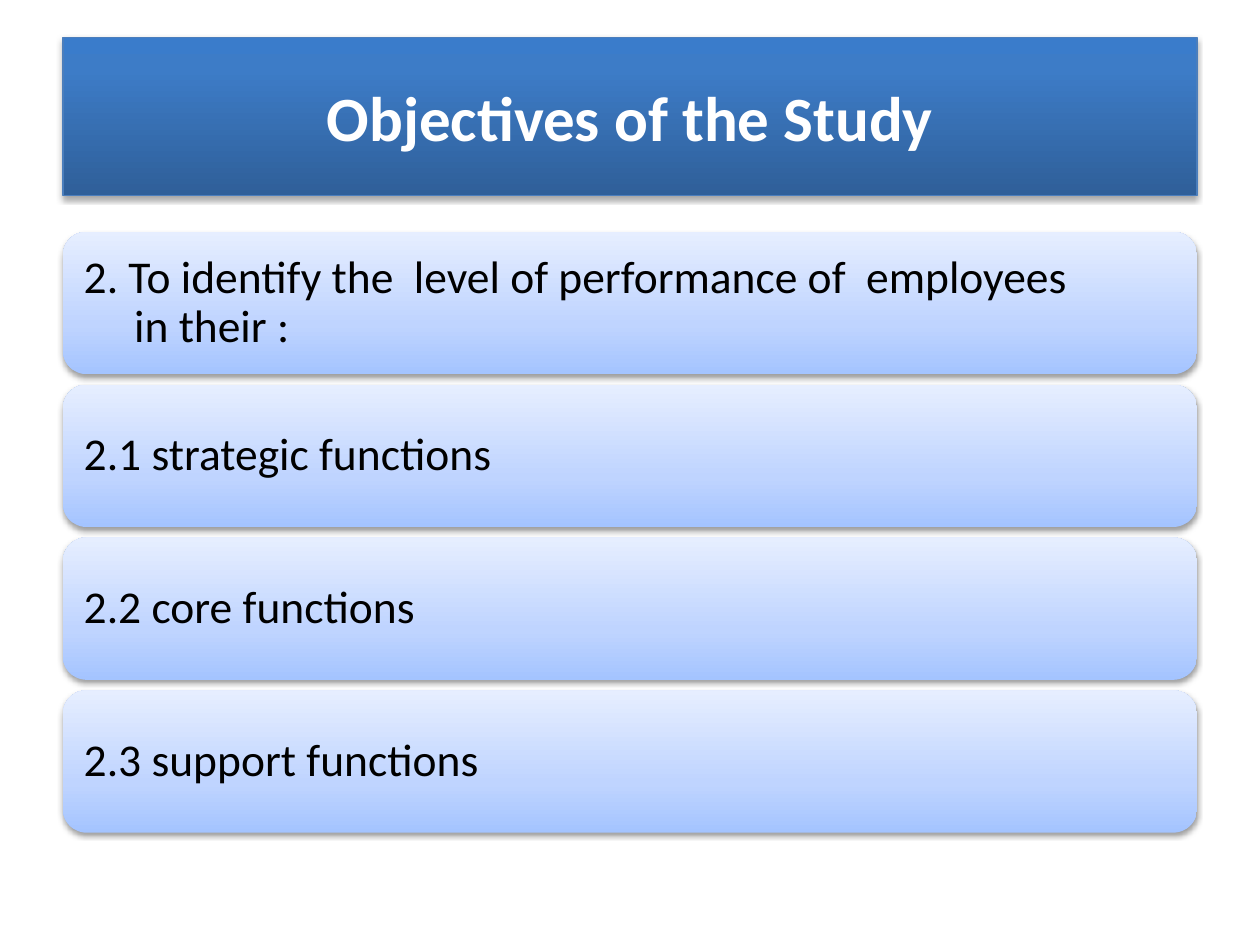
from lxml import etree
from pptx import Presentation
from pptx.dml.color import RGBColor
from pptx.enum.shapes import MSO_SHAPE as Shape
from pptx.enum.text import MSO_ANCHOR as Anchor, PP_ALIGN as Align
from pptx.oxml.ns import qn
from pptx.util import Inches, Pt

WHITE = RGBColor(0xFF, 0xFF, 0xFF)
BLACK = RGBColor(0x00, 0x00, 0x00)
TITLE_LINE = RGBColor(0x4B, 0x7E, 0xBC)
TITLE_STOPS = [(0, RGBColor(0x2F, 0x5F, 0x99)),
               (80, RGBColor(0x3D, 0x7C, 0xC7)),
               (100, RGBColor(0x3A, 0x7C, 0xCB))]
CARD_STOPS = [(0, RGBColor(0xA4, 0xC4, 0xFF)),
              (35, RGBColor(0xBF, 0xD4, 0xFF)),
              (100, RGBColor(0xE6, 0xEE, 0xFF))]

LEFT, WIDTH = 0.5, 9
CARD_TOP, CARD_HEIGHT, CARD_GAP = 1.84, 1.13, 0.083
HANGING = 0.4


def add_panel(kind, top, height, stops, opacity, distance):
    """Add a panel with an upward gradient and a soft shadow below it."""
    panel = page.shapes.add_shape(
        kind, Inches(LEFT), Inches(top), Inches(WIDTH), Inches(height))
    panel.fill.gradient()
    panel.fill.gradient_angle = 90
    stop_list = panel.fill._xPr.find(".//" + qn("a:gsLst"))
    stop_list.clear()
    for position, color in stops:
        stop = etree.SubElement(stop_list, qn("a:gs"), pos=str(position * 1000))
        etree.SubElement(stop, qn("a:srgbClr"), val=str(color))

    panel.shadow.inherit = False
    effects = panel._element.spPr.find(qn("a:effectLst"))
    shadow = etree.SubElement(
        effects, qn("a:outerShdw"), blurRad=str(Pt(3.1)),
        dist=str(Pt(distance)), dir="5400000", rotWithShape="0")
    tint = etree.SubElement(shadow, qn("a:srgbClr"), val=str(BLACK))
    etree.SubElement(tint, qn("a:alpha"), val=str(opacity * 1000))

    panel.text_frame.word_wrap = True
    panel.text_frame.vertical_anchor = Anchor.MIDDLE
    return panel


def add_span(para, text, size, color, bold=False):
    span = para.add_run()
    span.text = text
    span.font.name = "Calibri"
    span.font.size = Pt(size)
    span.font.bold = bold
    span.font.color.rgb = color


deck = Presentation()
deck.slide_width, deck.slide_height = Inches(10), Inches(7.5)
page = deck.slides.add_slide(deck.slide_layouts[6])

# Title banner
banner = add_panel(Shape.RECTANGLE, 0.3, 1.25, TITLE_STOPS, 35, 1.8)
banner.line.color.rgb = TITLE_LINE
banner.line.width = Pt(0.75)
para = banner.text_frame.paragraphs[0]
para.alignment = Align.CENTER
add_span(para, "Objectives of the Study", 36, WHITE, bold=True)

# Objective cards, each a list of lines
objectives = [
    ["2. To identify the  level of performance of  employees", "in their :"],
    ["2.1 strategic functions"],
    ["2.2 core functions"],
    ["2.3 support functions"],
]
for index, lines in enumerate(objectives):
    top = CARD_TOP + index * (CARD_HEIGHT + CARD_GAP)
    card = add_panel(Shape.ROUNDED_RECTANGLE, top, CARD_HEIGHT, CARD_STOPS, 38, 1.6)
    card.line.fill.background()
    frame = card.text_frame
    frame.margin_left = frame.margin_right = Inches(0.11)
    frame.margin_top = frame.margin_bottom = Inches(0.11)
    para = frame.paragraphs[0]
    para.alignment = Align.LEFT
    para.line_spacing = 0.9
    # Continuation lines hang under the first words
    properties = para._p.get_or_add_pPr()
    properties.set("marL", str(Inches(HANGING)))
    properties.set("indent", str(-Inches(HANGING)))
    for number, line in enumerate(lines):
        if number:
            para.add_line_break()
        add_span(para, line, 26, BLACK)

deck.save("out.pptx")
